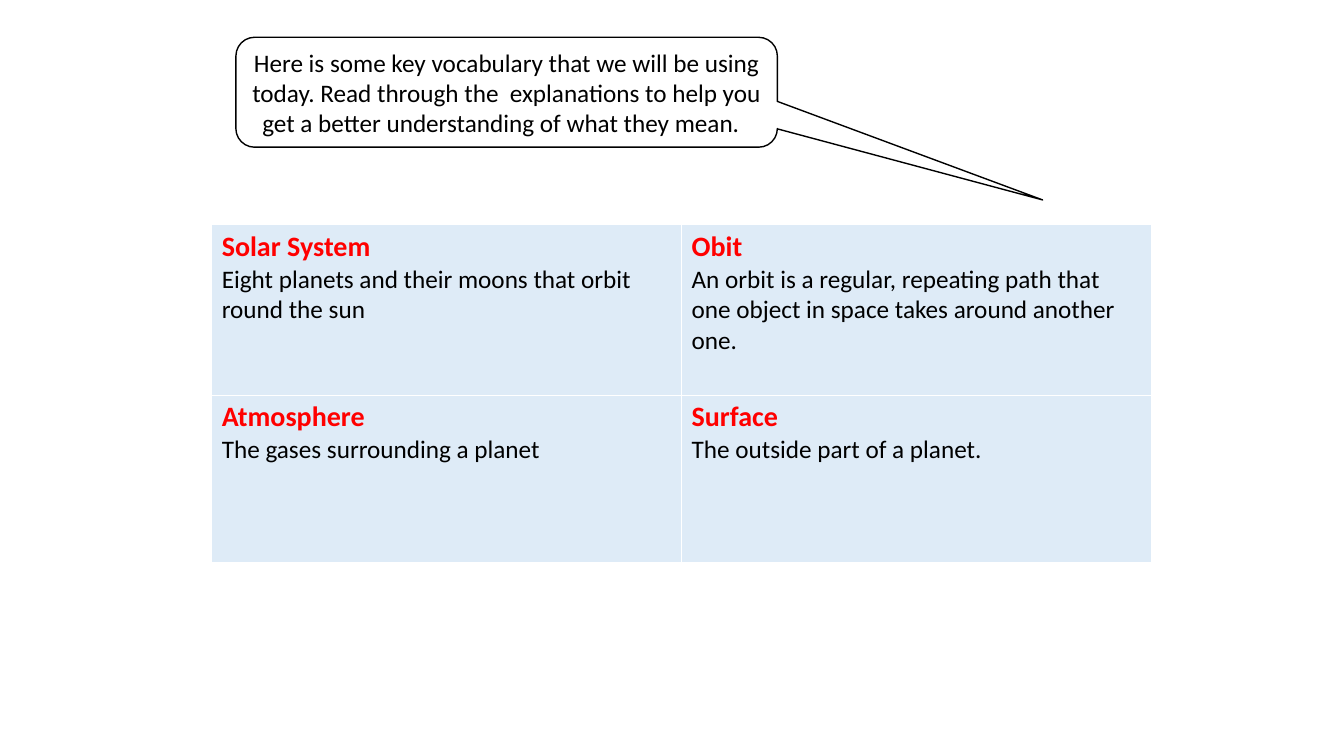
from lxml import etree
from pptx import Presentation
from pptx import util as u
from pptx.dml.color import RGBColor
from pptx.enum import shapes, text
from pptx.oxml import ns

BLACK = RGBColor(0x00, 0x00, 0x00)
RED = RGBColor(0xFF, 0x00, 0x00)
WHITE = RGBColor(0xFF, 0xFF, 0xFF)
PALE_BLUE = RGBColor(0xDE, 0xEB, 0xF7)

INTRODUCTION = (
    "Here is some key vocabulary that we will be using today. "
    "Read through the  explanations to help you get a better "
    "understanding of what they mean.  "
)
VOCABULARY = [
    [
        ("Solar System", "Eight planets and their moons that orbit round the sun"),
        ("Obit", "An orbit is a regular, repeating path that one object in space takes around another one."),
    ],
    [
        ("Atmosphere", "The gases surrounding a planet"),
        ("Surface", "The outside part of a planet."),
    ],
]


class VocabularySlide:
    font = "Calibri"
    term_size = 20
    body_size = 18

    def __init__(self, deck):
        self.page = deck.slides.add_slide(deck.slide_layouts[6])

    def add_text(self, para, words, size, color, bold=False):
        span = para.add_run()
        span.text = words
        span.font.name = self.font
        span.font.size = u.Pt(size)
        span.font.bold = bold
        span.font.color.rgb = color

    def add_callout(self, left, top, width, height, adjustments, words):
        box = self.page.shapes.add_shape(
            shapes.MSO_SHAPE.ROUNDED_RECTANGULAR_CALLOUT,
            u.Inches(left), u.Inches(top), u.Inches(width), u.Inches(height),
        )
        for index, value in enumerate(adjustments):
            box.adjustments[index] = value
        box.shadow.inherit = False
        box.fill.background()
        box.line.color.rgb = BLACK
        box.line.width = u.Pt(1)
        frame = box.text_frame
        frame.word_wrap = True
        frame.vertical_anchor = text.MSO_ANCHOR.MIDDLE
        para = frame.paragraphs[0]
        para.alignment = text.PP_ALIGN.CENTER
        self.add_text(para, words, self.body_size, BLACK)

    def add_borders(self, cell, color, points):
        properties = cell._tc.get_or_add_tcPr()
        for side in ("lnL", "lnR", "lnT", "lnB"):
            line = etree.SubElement(properties, ns.qn(f"a:{side}"), w=str(u.Pt(points)))
            fill = etree.SubElement(line, ns.qn("a:solidFill"))
            etree.SubElement(fill, ns.qn("a:srgbClr"), val=str(color))

    def add_table(self, left, top, column_width, row_heights, entries):
        columns = len(entries[0])
        table = self.page.shapes.add_table(
            len(entries), columns, u.Inches(left), u.Inches(top),
            u.Inches(column_width * columns), u.Inches(sum(row_heights)),
        ).table
        table.first_row = False
        table.horz_banding = False
        for column in table.columns:
            column.width = u.Inches(column_width)
        for row, height, row_entries in zip(table.rows, row_heights, entries):
            row.height = u.Inches(height)
            for cell, (term, meaning) in zip(row.cells, row_entries):
                self.add_borders(cell, WHITE, 1)
                cell.fill.solid()
                cell.fill.fore_color.rgb = PALE_BLUE
                frame = cell.text_frame
                self.add_text(frame.paragraphs[0], term, self.term_size, RED, True)
                self.add_text(frame.add_paragraph(), meaning, self.body_size, BLACK)


def main():
    deck = Presentation()
    deck.slide_width = u.Inches(13.33)
    deck.slide_height = u.Inches(7.5)
    slide = VocabularySlide(deck)
    slide.add_callout(2.34, 0.37, 5.37, 1.09, (0.99, 0.98, 0.17), INTRODUCTION)
    slide.add_table(2.1, 2.23, 4.66, (1.69, 1.66), VOCABULARY)
    deck.save("out.pptx")


if __name__ == "__main__":
    main()
